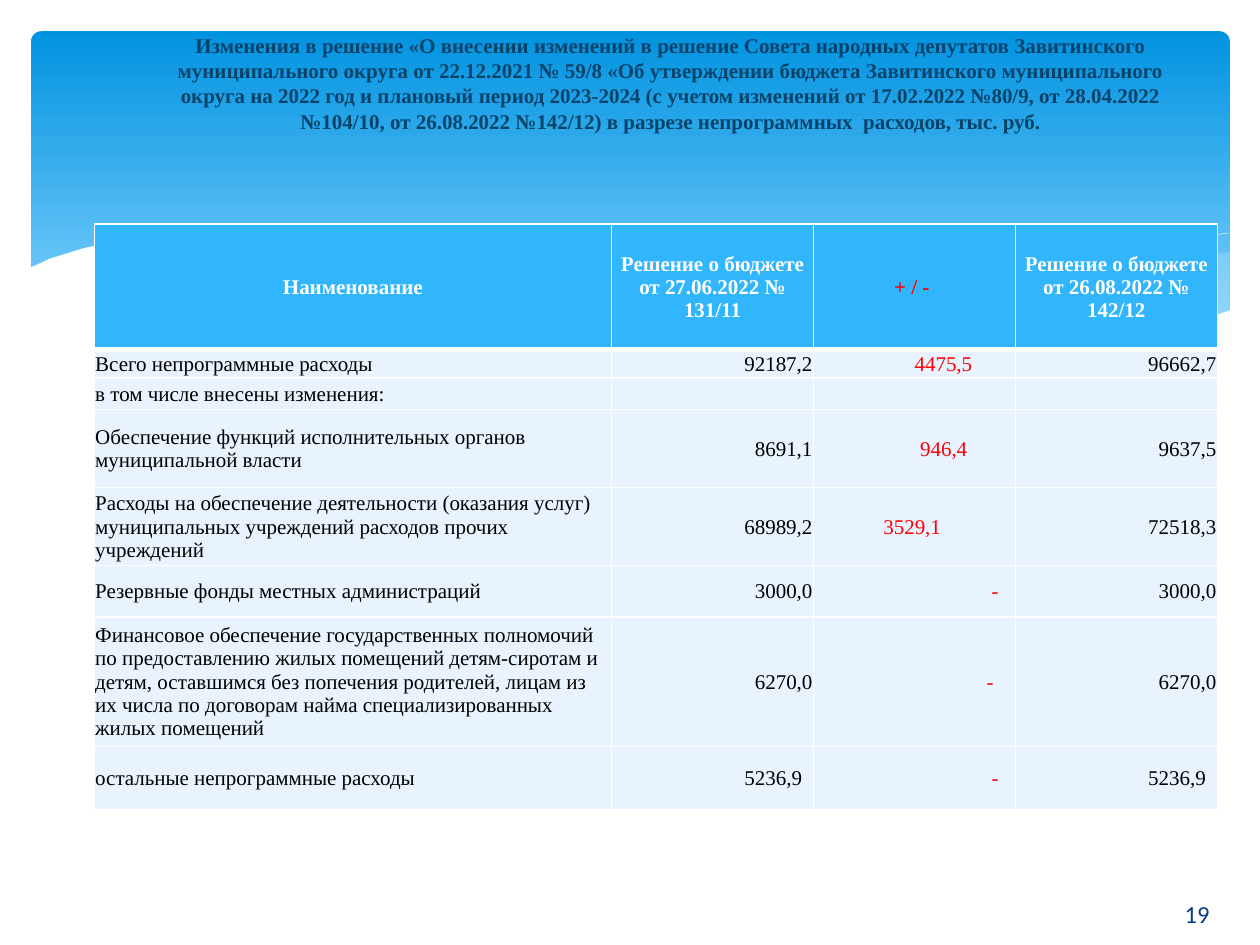
from lxml.etree import SubElement
from pptx import Presentation
from pptx.dml.color import RGBColor
from pptx.enum.shapes import MSO_SHAPE
from pptx.enum.text import MSO_ANCHOR, PP_ALIGN
from pptx.oxml.ns import qn
from pptx.util import Cm, Pt

SERIF = "Times New Roman"
WHITE, BLACK, RED = "FFFFFF", "000000", "FF0000"
LEFT, MID, RIGHT = PP_ALIGN.LEFT, PP_ALIGN.CENTER, PP_ALIGN.RIGHT

TITLE = "Изменения в решение «О внесении изменений в решение Совета народных депутатов Завитинского муниципального округа от 22.12.2021 № 59/8 «Об утверждении бюджета Завитинского муниципального округа на 2022 год и плановый период 2023-2024 (с учетом изменений от 17.02.2022 №80/9, от 28.04.2022 №104/10, от 26.08.2022 №142/12) в разрезе непрограммных  расходов, тыс. руб."

HEAD = ["Наименование", "Решение о бюджете от 27.06.2022 № 131/11", "+ / -",
        "Решение о бюджете от 26.08.2022 № 142/12"]
ROWS = [
    ["Всего непрограммные расходы", "92187,2", "4475,5", "96662,7"],
    ["в том числе внесены изменения:", "", "", ""],
    ["Обеспечение функций исполнительных органов муниципальной власти",
     "8691,1", "946,4", "9637,5"],
    ["Расходы на обеспечение деятельности (оказания услуг) муниципальных учреждений расходов прочих учреждений",
     "68989,2", "3529,1", "72518,3"],
    ["Резервные фонды местных администраций", "3000,0", "-", "3000,0"],
    ["Финансовое обеспечение государственных полномочий по предоставлению жилых помещений детям-сиротам и детям, оставшимся без попечения родителей, лицам из их числа по договорам найма специализированных жилых помещений",
     "6270,0", "-", "6270,0"],
    ["остальные непрограммные расходы", "5236,9", "-", "5236,9"],
]
WIDTHS = [10.43, 4.07, 4.07, 4.07]
HEIGHTS = [2.53, 0.57, 0.64, 1.57, 1.57, 1.04, 2.61, 1.27]
INDENTS = {(0, 2): 0.13, (1, 2): 0.87, (3, 2): 0.97, (4, 2): 1.5, (5, 2): 0.34,
           (6, 2): 0.44, (7, 1): 0.23, (7, 2): 0.34, (7, 3): 0.23}

SWELL = [(24.79, 5.08), (23.01, 5.41), (21.13, 5.84), (19.13, 6.3), (16.79, 6.73),
         (18.59, 6.96), (20.4, 7.06), (21.92, 6.99), (23.39, 6.73), (24.79, 6.27)]
CREST = [(22.68, 6.93), (20.5, 6.6), (17.93, 6.1), (15.98, 5.64), (13.74, 5.16),
         (11.81, 4.85), (9.65, 4.7), (7.26, 4.85), (9.19, 5.16), (11.4, 5.64),
         (14.38, 6.3), (16.89, 6.76), (19, 7.01), (21.03, 7.06)]
CURVES = [
    [(7.85, 4.95), (9.5, 4.78), (11.43, 4.78), (13.54, 4.93), (15.44, 5.18),
     (17.65, 5.56), (20.19, 6.12), (23.04, 6.91)],
    [(15.57, 6.53), (17.65, 5.97), (20.47, 5.33), (22.73, 4.93), (24.77, 4.7)],
]
SHORE = [(24.82, 6.25), (23.37, 6.73), (21.92, 6.96), (20.55, 7.04), (18.9, 6.96),
         (16.97, 6.73), (14.71, 6.35), (11.35, 5.59), (9.27, 5.13), (7.42, 4.83),
         (5.84, 4.7), (4.5, 4.67), (3.35, 4.72), (2.41, 4.85), (1.7, 5),
         (1.02, 5.21), (0.58, 5.41), (0.58, 8.36), (24.82, 8.36)]


def color(code):
    return RGBColor.from_string(code)


def paint(fill, code, alpha=100):
    fill.solid()
    fill.fore_color.rgb = color(code)
    if alpha < 100:
        tone = fill._xPr.find(qn("a:solidFill"))[0]
        SubElement(tone, qn("a:alpha"), val=str(alpha * 1000))


def outline(slide, points, closed):
    spots = [(Cm(x), Cm(y)) for x, y in points]
    maker = slide.shapes.build_freeform(*spots[0], scale=1.0)
    maker.add_line_segments(spots[1:], close=closed)
    shape = maker.convert_to_shape()
    shape.shadow.inherit = False
    return shape


def wave(slide, points, code, alpha=100):
    shape = outline(slide, points, True)
    paint(shape.fill, code, alpha)
    shape.line.fill.background()


def curve(slide, points):
    shape = outline(slide, points, False)
    shape.fill.background()
    shape.line.color.rgb = color(WHITE)
    shape.line.width = Pt(0.25)


def write(frame, text, align, size, font, code, bold=False):
    para = frame.paragraphs[0]
    para.alignment = align
    if not text:
        para.font.size = Pt(size)
        return
    run = para.add_run()
    run.text = text
    run.font.size = Pt(size)
    run.font.name = font
    run.font.bold = bold
    run.font.color.rgb = color(code)


def label(slide, box, text, anchor, *style):
    frame = slide.shapes.add_textbox(*map(Cm, box)).text_frame
    frame.word_wrap = True
    frame.vertical_anchor = anchor
    write(frame, text, MID, *style)


def border(cell, low):
    props = cell._tc.get_or_add_tcPr()
    for at, (side, width) in enumerate([("lnL", 1), ("lnR", 1), ("lnT", 1), ("lnB", low)]):
        line = SubElement(props, qn("a:" + side), w=str(Pt(width)))
        fill = SubElement(line, qn("a:solidFill"))
        SubElement(fill, qn("a:srgbClr"), val=WHITE)
        props.insert(at, line)


def backdrop(slide):
    sky = slide.shapes.add_shape(MSO_SHAPE.ROUNDED_RECTANGLE,
                                 *map(Cm, (0.63, 0.63, 24.16, 6.86)))
    sky.adjustments[0] = 0.03
    sky.shadow.inherit = False
    sky.line.fill.background()
    sky.fill.gradient()
    sky.fill.gradient_angle = 270
    for stop, (place, code) in zip(sky.fill.gradient_stops, [(0, "0293E0"), (0.9, "83D3FE")]):
        stop.position = place
        stop.color.rgb = color(code)
    wave(slide, SWELL, "C6E7FC", 29)
    wave(slide, CREST, "C6E7FC", 40)
    for points in CURVES:
        curve(slide, points)
    wave(slide, SHORE, WHITE)


def budget(slide):
    data = [HEAD] + ROWS
    box = (1.9, 4.52, sum(WIDTHS), sum(HEIGHTS))
    table = slide.shapes.add_table(len(data), len(HEAD), *map(Cm, box)).table
    table.horz_banding = False
    for col, width in zip(table.columns, WIDTHS):
        col.width = Cm(width)
    for r, texts in enumerate(data):
        table.rows[r].height = Cm(HEIGHTS[r])
        top = r == 0
        for c, text in enumerate(texts):
            cell = table.cell(r, c)
            cell.margin_left = cell.margin_top = Cm(0.02)
            cell.margin_right = Cm(INDENTS.get((r, c), 0.02))
            cell.margin_bottom = 0
            cell.vertical_anchor = MSO_ANCHOR.MIDDLE
            paint(cell.fill, "31B6FD" if top else "E8F3FF")
            border(cell, 3 if top else 1)
            align = MID if top else RIGHT if c else LEFT
            code = RED if c == 2 else WHITE if top else BLACK
            write(cell.text_frame, text, align, 12, SERIF, code, top)


def main():
    deck = Presentation()
    deck.slide_width, deck.slide_height = Cm(25.4), Cm(19.05)
    slide = deck.slides.add_slide(deck.slide_layouts[6])
    backdrop(slide)
    label(slide, (2.92, 0.53, 21.21, 2.31), TITLE, MSO_ANCHOR.TOP, 12, SERIF, "06436B", True)
    label(slide, (22.94, 17.5, 2.39, 1.85), "19", MSO_ANCHOR.MIDDLE, 14, "Calibri", "073E87")
    budget(slide)
    deck.save("out.pptx")


if __name__ == "__main__":
    main()
